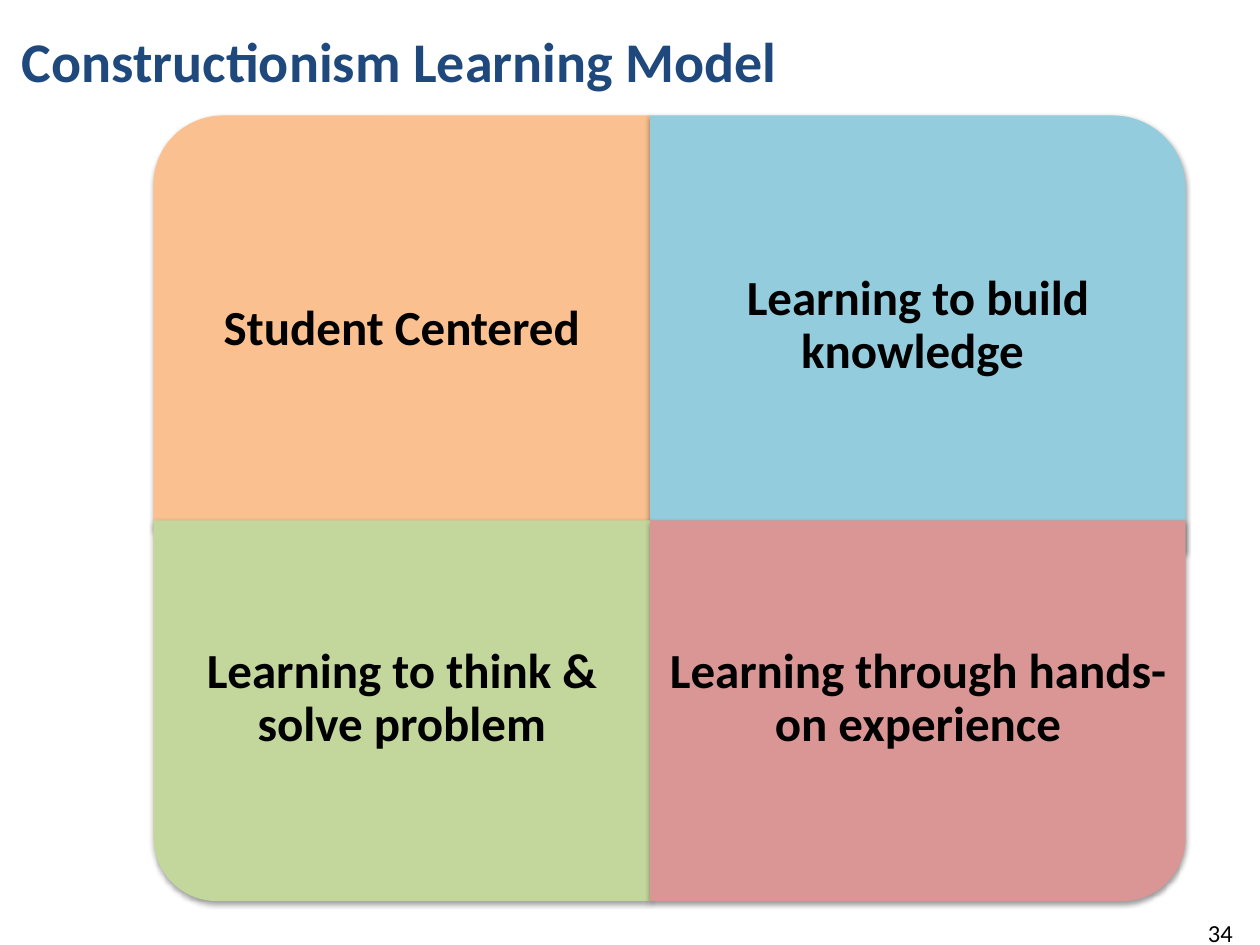
"""Build the slide of four learning model quadrants."""
from lxml.etree import fromstring
from pptx import Presentation
from pptx.dml.color import RGBColor
from pptx.enum.shapes import MSO_SHAPE as Kind
from pptx.enum.text import MSO_ANCHOR as Anchor, PP_ALIGN as Align
from pptx.util import Pt

SIZE = 720, 540
TITLE = "Constructionism Learning Model"
PAGE = "34"
COLS = [(87.7, 283.8), (371.5, 306)]
ROWS = [(93, 186.5), (317.5, 163.5)]
TOPS = [66, 297.4]
QUADS = [
    dict(text="Student Centered", col=0, row=0, fill="FAC090",
         turn=270, high=237, pad=11.5, gap=1.0),
    dict(text="Learning to build knowledge ", col=1, row=0, fill="93CDDD",
         turn=0, high=249, pad=11.5, gap=0.9),
    dict(text="Learning to think &\vsolve problem", col=0, row=1, fill="C3D69B",
         turn=180, high=217.5, pad=11.5, gap=0.9),
    dict(text="Learning through hands- on experience", col=1, row=1, fill="D99694",
         turn=90, high=217.5, pad=8.5, gap=0.9),
]
SHADE = (
    '<a:effectLst xmlns:a="http://schemas.openxmlformats.org/drawingml/2006/main">'
    '<a:outerShdw blurRad="39370" dist="20320" dir="5400000" rotWithShape="0">'
    '<a:srgbClr val="000000"><a:alpha val="38000"/></a:srgbClr>'
    '</a:outerShdw></a:effectLst>'
)


def color(code):
    """Turn a hex string into a colour."""
    return RGBColor.from_string(code)


def apply(obj, vals):
    """Set each named attribute."""
    for name, val in vals.items():
        setattr(obj, name, val)


def write(slide, text, box, font, frame, para):
    """Add a text box in Calibri."""
    body = slide.shapes.add_textbox(*map(Pt, box)).text_frame
    apply(body, frame)
    first = body.paragraphs[0]
    first.text = text
    apply(first, para)
    size, code, bold = font
    for run in first.runs:
        apply(run.font, dict(name="Calibri", size=Pt(size), bold=bold))
        run.font.color.rgb = color(code)


def draw(slide, quad):
    """Add one turned panel and its label."""
    left, wide = COLS[quad["col"]]
    top, high = TOPS[quad["row"]], quad["high"]
    w, h = (high, wide) if quad["turn"] % 180 else (wide, high)
    box = left + (wide - w) / 2, top + (high - h) / 2, w, h
    panel = slide.shapes.add_shape(Kind.ROUND_1_RECTANGLE, *map(Pt, box))
    panel.rotation = quad["turn"]
    panel.fill.solid()
    panel.fill.fore_color.rgb = color(quad["fill"])
    panel.line.fill.background()
    panel._element.spPr.append(fromstring(SHADE))
    y, tall = ROWS[quad["row"]]
    sides = ("left", "top", "right", "bottom")
    frame = {f"margin_{side}": Pt(quad["pad"]) for side in sides}
    frame.update(word_wrap=True, vertical_anchor=Anchor.MIDDLE)
    write(slide, quad["text"], (left, y, wide, tall), (28, "000000", True),
          frame, dict(alignment=Align.CENTER, line_spacing=quad["gap"]))


def main():
    """Make and save the slide."""
    deck = Presentation()
    deck.slide_width, deck.slide_height = map(Pt, SIZE)
    slide = deck.slides.add_slide(deck.slide_layouts[6])
    write(slide, PAGE, (677.5, 524, 34, 17.5), (14, "000000", False),
          dict(word_wrap=True, vertical_anchor=Anchor.MIDDLE),
          dict(alignment=Align.RIGHT))
    write(slide, TITLE, (5.5, 11.5, 451, 46), (32, "1F497D", True),
          dict(word_wrap=False), dict(alignment=Align.LEFT))
    for quad in QUADS:
        draw(slide, quad)
    deck.save("out.pptx")


if __name__ == "__main__":
    main()
